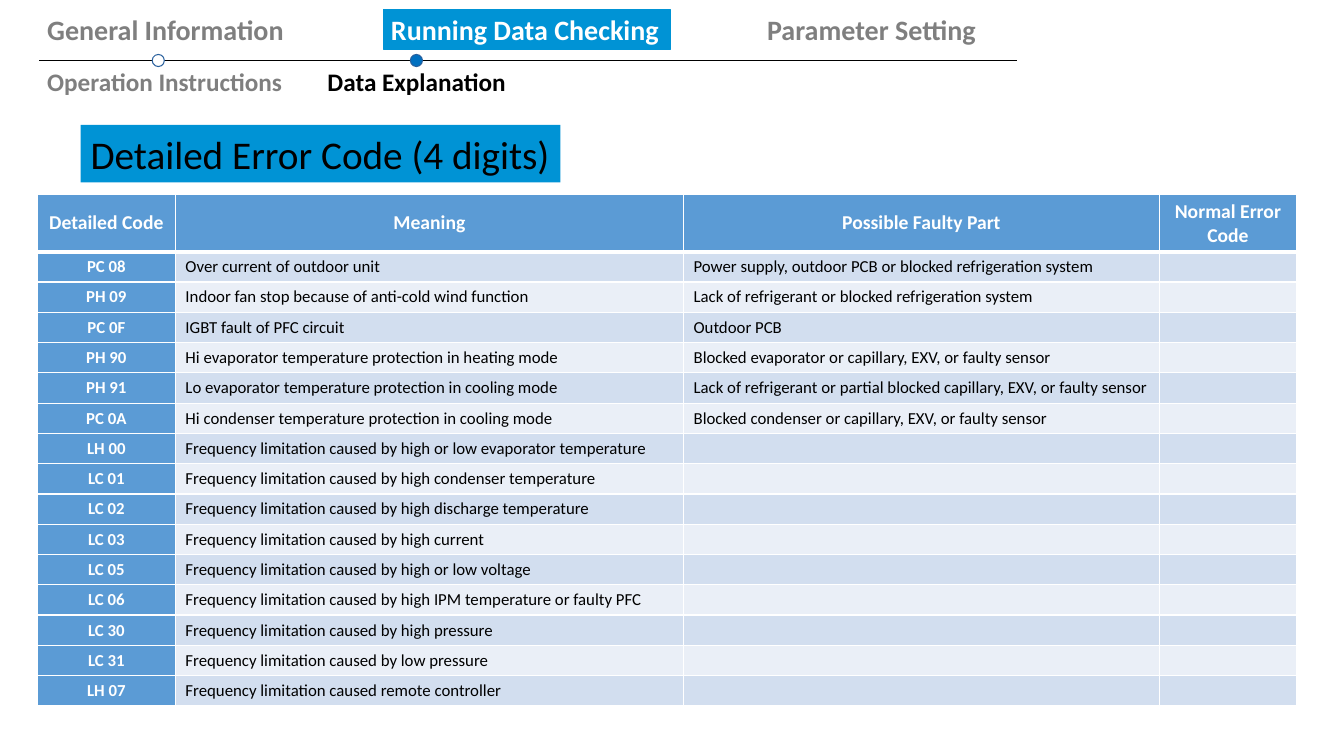
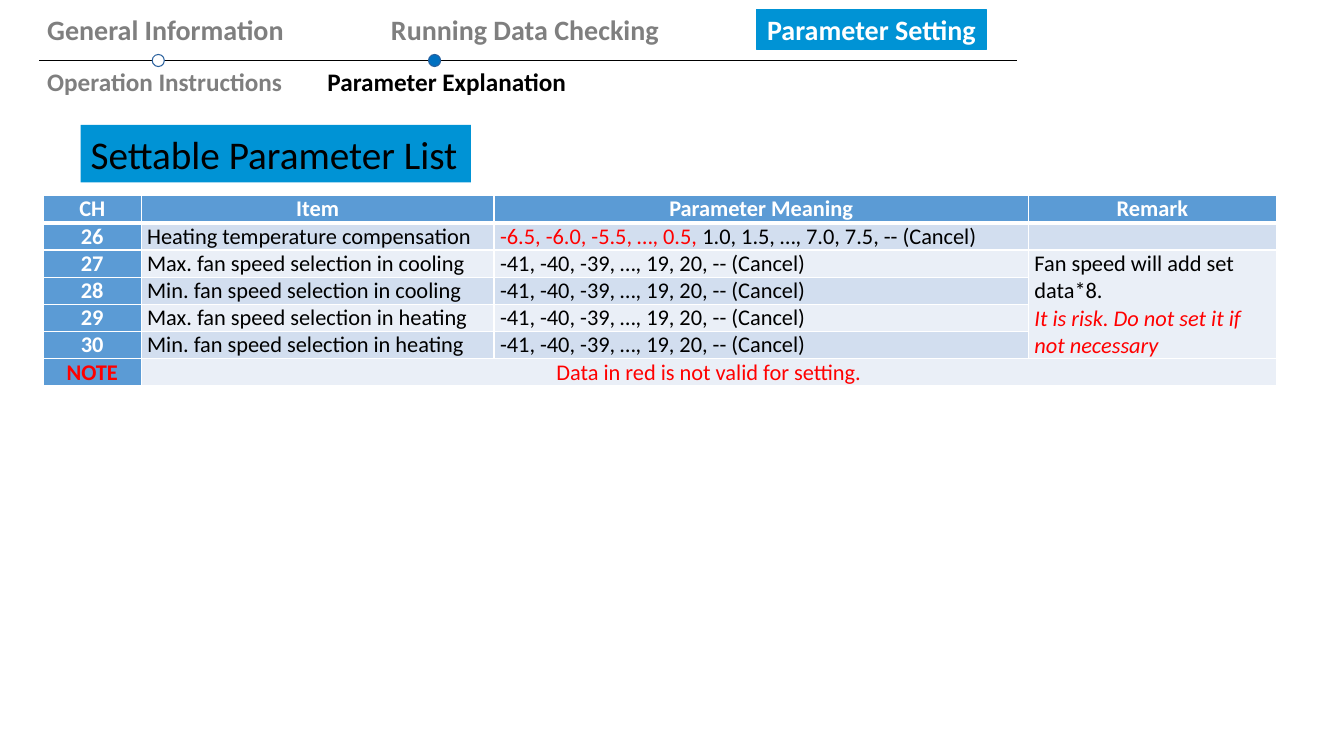
from lxml.etree import SubElement
from pptx import Presentation
from pptx.dml.color import RGBColor
from pptx.enum.shapes import MSO_CONNECTOR, MSO_SHAPE
from pptx.enum.text import MSO_ANCHOR, PP_ALIGN
from pptx.oxml.ns import qn
from pptx.util import Inches, Pt

COLORS = {
    "black": "000000", "white": "FFFFFF", "gray": "7F7F7F", "red": "FF0000",
    "accent": "0093D5", "marker": "0070C0", "marker_edge": "29609D",
    "header": "5B9BD5", "band_dark": "D2DEEF", "band_light": "EAEFF7",
}
FONT = "Calibri"
CHAPTERS = ["General Information", "Running Data Checking", "Parameter Setting"]
CHAPTER_TABS = [3.41, 7.14]
CHAPTER_HIGHLIGHTS = {1: (3.8, 2.85), 2: (7.5, 2.28)}
SECTION_TABS = [2.78]
MARKER_SIZE = 0.12

ERROR_HEADINGS = ["Detailed Code", "Meaning", "Possible Faulty Part", "Normal Error Code"]
ERROR_CODES = [
    ("PC 08", "Over current of outdoor unit",
     "Power supply, outdoor PCB or blocked refrigeration system"),
    ("PH 09", "Indoor fan stop because of anti-cold wind function",
     "Lack of refrigerant or blocked refrigeration system"),
    ("PC 0F", "IGBT fault of PFC circuit", "Outdoor PCB"),
    ("PH 90", "Hi evaporator temperature protection in heating mode",
     "Blocked evaporator or capillary, EXV, or faulty sensor"),
    ("PH 91", "Lo evaporator temperature protection in cooling mode",
     "Lack of refrigerant or partial blocked capillary, EXV, or faulty sensor"),
    ("PC 0A", "Hi condenser temperature protection in cooling mode",
     "Blocked condenser or capillary, EXV, or faulty sensor"),
]
FREQUENCY_LIMITS = [
    ("LH 00", "by high or low evaporator temperature"),
    ("LC 01", "by high condenser temperature"),
    ("LC 02", "by high discharge temperature"),
    ("LC 03", "by high current"),
    ("LC 05", "by high or low voltage"),
    ("LC 06", "by high IPM temperature or faulty PFC"),
    ("LC 30", "by high pressure"),
    ("LC 31", "by low pressure"),
    ("LH 07", "remote controller"),
]

RED = {"color": "red"}
PARAMETER_HEADINGS = ["CH", "Item", "Parameter Meaning", "Remark"]
FAN_RANGE = "-41, -40, -39, …, 19, 20, -- (Cancel)"
HEATING_RANGE = [[("-6.5, -6.0, -5.5, …, 0.5, ", RED),
                  ("1.0, 1.5, …, 7.0, 7.5, -- (Cancel)", {})]]
FAN_REMARK = [[("Fan speed will add set data*8.", {})],
              [("It is risk. Do not set it if not necessary", {"color": "red", "italic": True})]]
PARAMETERS = [
    ("26", "Heating temperature compensation", HEATING_RANGE, ""),
    ("27", "Max. fan speed selection in cooling", FAN_RANGE, FAN_REMARK),
    ("28", "Min. fan speed selection in cooling", FAN_RANGE, ""),
    ("29", "Max. fan speed selection in heating", FAN_RANGE, ""),
    ("30", "Min. fan speed selection in heating", FAN_RANGE, ""),
    ([[("NOTE", RED)]], [[("Data in red is not valid for setting.", RED)]], "", ""),
]


def rgb(name):
    """Return the palette colour with this name."""
    return RGBColor.from_string(COLORS[name])


def write(paragraph, text, size=16, color="black", bold=False, italic=False):
    """Append one formatted run to a paragraph."""
    run = paragraph.add_run()
    run.text = text
    font = run.font
    font.name, font.size, font.bold, font.italic = FONT, Pt(size), bold, italic
    font.color.rgb = rgb(color)


def add_block(slide, kind, left, top, width, height, fill, edge=None):
    """Add a flat preset shape with an optional outline."""
    block = slide.shapes.add_shape(kind, Inches(left), Inches(top), Inches(width), Inches(height))
    block.shadow.inherit = False
    block.fill.solid()
    block.fill.fore_color.rgb = rgb(fill)
    if edge:
        block.line.color.rgb = rgb(edge)
        block.line.width = Pt(0.75)
    else:
        block.line.fill.background()
    return block


def add_labels(slide, top, height, labels, tabs, active, active_color, size):
    """Add a row of tab-aligned labels with the active one coloured."""
    box = slide.shapes.add_textbox(Inches(0.37), Inches(top), Inches(9.6), Inches(height))
    box.text_frame.word_wrap = True
    paragraph = box.text_frame.paragraphs[0]
    stops = SubElement(paragraph._p.get_or_add_pPr(), qn("a:tabLst"))
    for position in tabs:
        SubElement(stops, qn("a:tab"), pos=str(Inches(position)), algn="l")
    for index, label in enumerate(labels):
        write(paragraph, "\t" + label if index else label, size=size, bold=True,
              color=active_color if index == active else "gray")


def add_navigation(slide, chapter, section, marker_left):
    """Add the chapter row, the timeline and the section row."""
    timeline = slide.shapes.add_connector(
        MSO_CONNECTOR.STRAIGHT, Inches(0.39), Inches(0.6), Inches(10.09), Inches(0.6))
    timeline.line.color.rgb = rgb("black")
    timeline.line.width = Pt(0.75)
    SubElement(timeline._element.spPr, qn("a:effectLst"))
    for left, fill in ((marker_left, "marker"), (1.51, "white")):
        add_block(slide, MSO_SHAPE.OVAL, left, 0.54, MARKER_SIZE, MARKER_SIZE, fill, "marker_edge")
    left, width = CHAPTER_HIGHLIGHTS[chapter]
    add_block(slide, MSO_SHAPE.FLOWCHART_PROCESS, left, 0.09, width, 0.4, "accent", "accent")
    add_labels(slide, 0.07, 0.48, CHAPTERS, CHAPTER_TABS, chapter, "white", 20)
    add_labels(slide, 0.61, 0.4, ["Operation Instructions", section], SECTION_TABS, 1, "black", 18)


def add_title(slide, text, width):
    """Add the highlighted slide title."""
    banner = add_block(slide, MSO_SHAPE.RECTANGLE, 0.8, 1.24, width, 0.57, "accent")
    frame = banner.text_frame
    frame.word_wrap = False
    frame.vertical_anchor = MSO_ANCHOR.TOP
    frame.paragraphs[0].alignment = PP_ALIGN.LEFT
    write(frame.paragraphs[0], text, size=28)


def add_borders(cell, top, bottom):
    """Draw white cell borders of the given top and bottom widths."""
    properties = cell._tc.get_or_add_tcPr()
    for side, width in (("L", 1), ("R", 1), ("T", top), ("B", bottom)):
        border = SubElement(properties, qn("a:ln" + side), w=str(Pt(width)))
        fill = SubElement(border, qn("a:solidFill"))
        SubElement(fill, qn("a:srgbClr"), val=COLORS["white"])


def fill_cell(cell, content, alignment, **style):
    """Write a string or a list of paragraphs of runs into a cell."""
    cell.vertical_anchor = MSO_ANCHOR.MIDDLE
    frame = cell.text_frame
    if not content:
        SubElement(frame.paragraphs[0]._p, qn("a:endParaRPr"), sz=str(style["size"] * 100))
        return
    lines = [[(content, {})]] if isinstance(content, str) else content
    for index, runs in enumerate(lines):
        paragraph = frame.add_paragraph() if index else frame.paragraphs[0]
        paragraph.alignment = alignment
        for text, extra in runs:
            write(paragraph, text, **{**style, **extra})


def add_grid(slide, left, top, widths, heights, rows, header_size, size, alignments,
             insets=None, merges=(), centered=()):
    """Add a banded table with a header row and a header column."""
    grid = slide.shapes.add_table(
        len(rows), len(widths), Inches(left), Inches(top),
        Inches(sum(widths)), Inches(sum(heights))).table
    for column, width in zip(grid.columns, widths):
        column.width = Inches(width)
    for row, height in zip(grid.rows, heights):
        row.height = Inches(height)
    for first, last in merges:
        grid.cell(*first).merge(grid.cell(*last))
    for r, contents in enumerate(rows):
        for c, content in enumerate(contents):
            cell = grid.cell(r, c)
            heading = r == 0 or c == 0
            if insets:
                cell.margin_left = cell.margin_right = Inches(insets[0])
                cell.margin_top = cell.margin_bottom = Inches(insets[1])
            add_borders(cell, 3 if r == 1 else 1, 3 if r == 0 else 1)
            cell.fill.solid()
            band = "band_dark" if r % 2 else "band_light"
            cell.fill.fore_color.rgb = rgb("header" if heading else band)
            middle = heading or (r, c) in centered
            fill_cell(cell, content, PP_ALIGN.CENTER if middle else alignments[c],
                      size=header_size if r == 0 else size,
                      color="white" if heading else "black", bold=heading)


def add_error_codes(slide):
    """Build the slide of detailed error codes."""
    add_navigation(slide, 1, "Data Explanation", 4.07)
    add_title(slide, "Detailed Error Code (4 digits)", 4.76)
    rows = [ERROR_HEADINGS]
    rows += [(*entry, "") for entry in ERROR_CODES]
    rows += [(code, f"Frequency limitation caused {cause}", "", "")
             for code, cause in FREQUENCY_LIMITS]
    add_grid(slide, 0.37, 1.93, [1.37, 5.04, 4.72, 1.36], [0.55] + [0.3] * (len(rows) - 1),
             rows, 14, 12, [PP_ALIGN.CENTER, PP_ALIGN.JUSTIFY, PP_ALIGN.LEFT, PP_ALIGN.LEFT])


def add_parameters(slide):
    """Build the slide of settable parameters."""
    add_navigation(slide, 2, "Parameter Explanation", 4.25)
    add_title(slide, "Settable Parameter List", 3.87)
    rows = [PARAMETER_HEADINGS, *PARAMETERS]
    add_grid(slide, 0.43, 1.94, [0.97, 3.5, 5.3, 2.46], [0.27] * len(rows), rows, 16, 16,
             [PP_ALIGN.LEFT] * 4, insets=(0.06, 0),
             merges=[((2, 3), (5, 3)), ((6, 1), (6, 3))], centered=[(6, 1)])


def main():
    """Build and save the presentation."""
    deck = Presentation()
    deck.slide_width, deck.slide_height = Inches(13.33), Inches(7.5)
    for build in (add_error_codes, add_parameters):
        build(deck.slides.add_slide(deck.slide_layouts[6]))
    deck.save("out.pptx")


if __name__ == "__main__":
    main()
